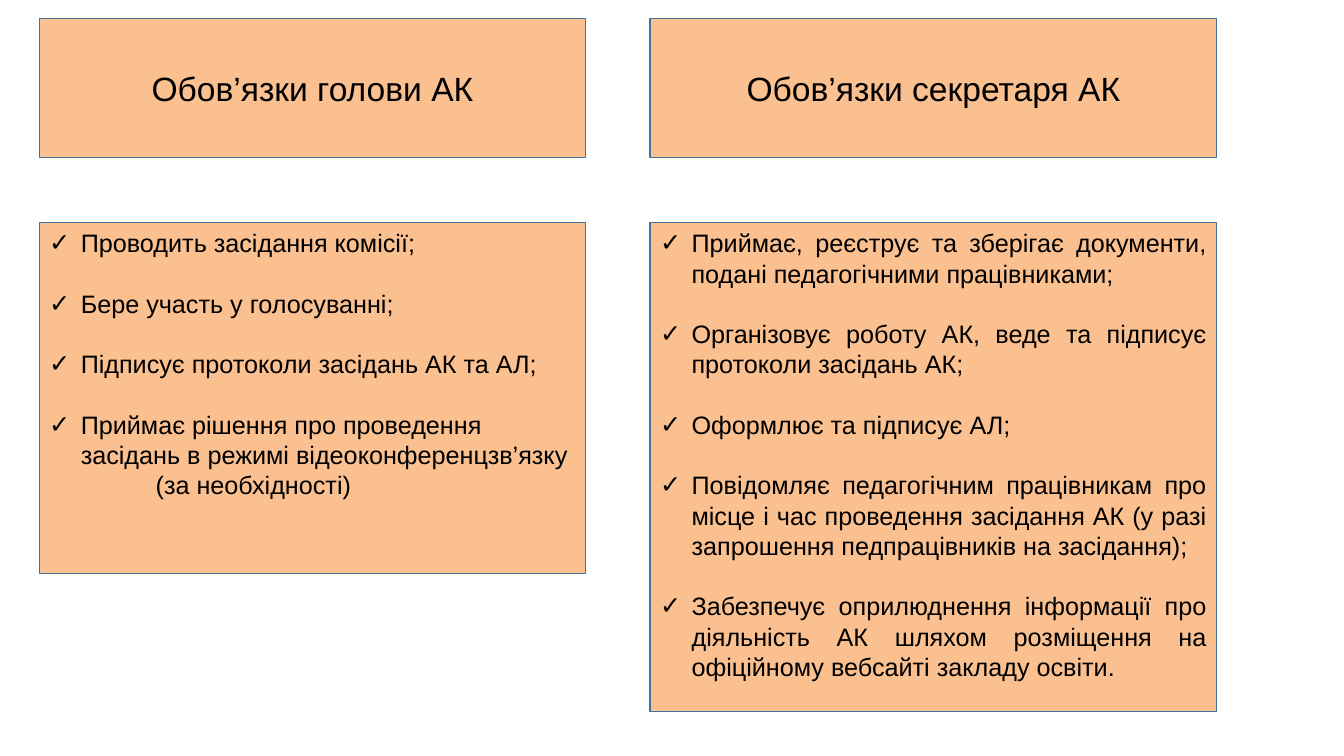
from lxml.etree import SubElement
from pptx import Presentation
from pptx.dml.color import RGBColor
from pptx.enum.shapes import MSO_SHAPE
from pptx.enum.text import MSO_ANCHOR, PP_ALIGN
from pptx.oxml.ns import qn
from pptx.util import Pt

COLUMNS = [
    {"left": 28.1, "width": 390.2, "body_height": 250.6, "align": PP_ALIGN.LEFT,
     "title": "Обов’язки голови АК",
     "duties": ["Проводить засідання комісії;",
                "Бере участь у голосуванні;",
                "Підписує протоколи засідань АК та АЛ;",
                "Приймає рішення про проведення засідань в режимі відеоконференцзв’язку"],
     "remark": "(за необхідності)"},
    {"left": 464.4, "width": 404.6, "body_height": 349.2, "align": PP_ALIGN.JUSTIFY,
     "title": "Обов’язки секретаря АК",
     "duties": ["Приймає, реєструє та зберігає документи, подані педагогічними працівниками;",
                "Організовує роботу АК, веде та підписує протоколи засідань АК;",
                "Оформлює та підписує АЛ;",
                "Повідомляє педагогічним працівникам про місце і час проведення засідання АК "
                "(у разі запрошення педпрацівників на засідання);",
                "Забезпечує оприлюднення інформації про діяльність АК шляхом розміщення на "
                "офіційному вебсайті закладу освіти."],
     "remark": None},
]
HEAD_TOP, HEAD_HEIGHT, BODY_TOP = 13, 99.4, 159.1
BULLET_INDENT, REMARK_INDENT, DUTY_GAP = 22.5, 76, 21.6
THEME = {"fill": RGBColor(0xFA, 0xC0, 0x90), "line": RGBColor(0x41, 0x71, 0x9C),
         "text": RGBColor(0, 0, 0), "font": "Arial", "head": 24, "body": 18}


def add_box(s, left, top, width, height, anchor):
    """Draw a filled panel and return its text frame."""
    sp = s.shapes.add_shape(MSO_SHAPE.RECTANGLE, Pt(left), Pt(top), Pt(width), Pt(height))
    sp.shadow.inherit = False
    sp.fill.solid()
    sp.fill.fore_color.rgb = THEME["fill"]
    sp.line.color.rgb = THEME["line"]
    sp.line.width = Pt(1)
    sp.text_frame.word_wrap = True
    sp.text_frame.vertical_anchor = anchor
    return sp.text_frame


def write(p, text, size, **formats):
    """Fill a paragraph with one formatted run."""
    for name, value in formats.items():
        setattr(p, name, value)
    r = p.add_run()
    r.text = text
    for name, value in {"name": THEME["font"], "size": Pt(THEME[size])}.items():
        setattr(r.font, name, value)
    r.font.color.rgb = THEME["text"]


def indent(p, left, bullet=None):
    """Indent a paragraph, hanging it behind a bullet if one is given."""
    pPr = p._p.get_or_add_pPr()
    pPr.set("marL", str(Pt(left)))
    pPr.set("indent", str(-Pt(left) if bullet else 0))
    if bullet:
        SubElement(pPr, qn("a:buFont")).set("typeface", THEME["font"])
        SubElement(pPr, qn("a:buChar")).set("char", bullet)


def add_column(s, col):
    """Add a heading panel with its list of duties below."""
    tf = add_box(s, col["left"], HEAD_TOP, col["width"], HEAD_HEIGHT, MSO_ANCHOR.MIDDLE)
    write(tf.paragraphs[0], col["title"], "head", alignment=PP_ALIGN.CENTER)
    tf = add_box(s, col["left"], BODY_TOP, col["width"], col["body_height"], MSO_ANCHOR.TOP)
    for i, duty in enumerate(col["duties"]):
        p = tf.add_paragraph() if i else tf.paragraphs[0]
        write(p, duty, "body", alignment=col["align"], space_before=Pt(DUTY_GAP if i else 0))
        indent(p, BULLET_INDENT, "✓")
    if col["remark"]:
        p = tf.add_paragraph()
        write(p, col["remark"], "body", alignment=col["align"])
        indent(p, REMARK_INDENT)


def main():
    """Build the slide and save it."""
    prs = Presentation()
    prs.slide_width, prs.slide_height = Pt(960), Pt(540)
    s = prs.slides.add_slide(prs.slide_layouts[6])
    for col in COLUMNS:
        add_column(s, col)
    prs.save("out.pptx")


if __name__ == "__main__":
    main()
